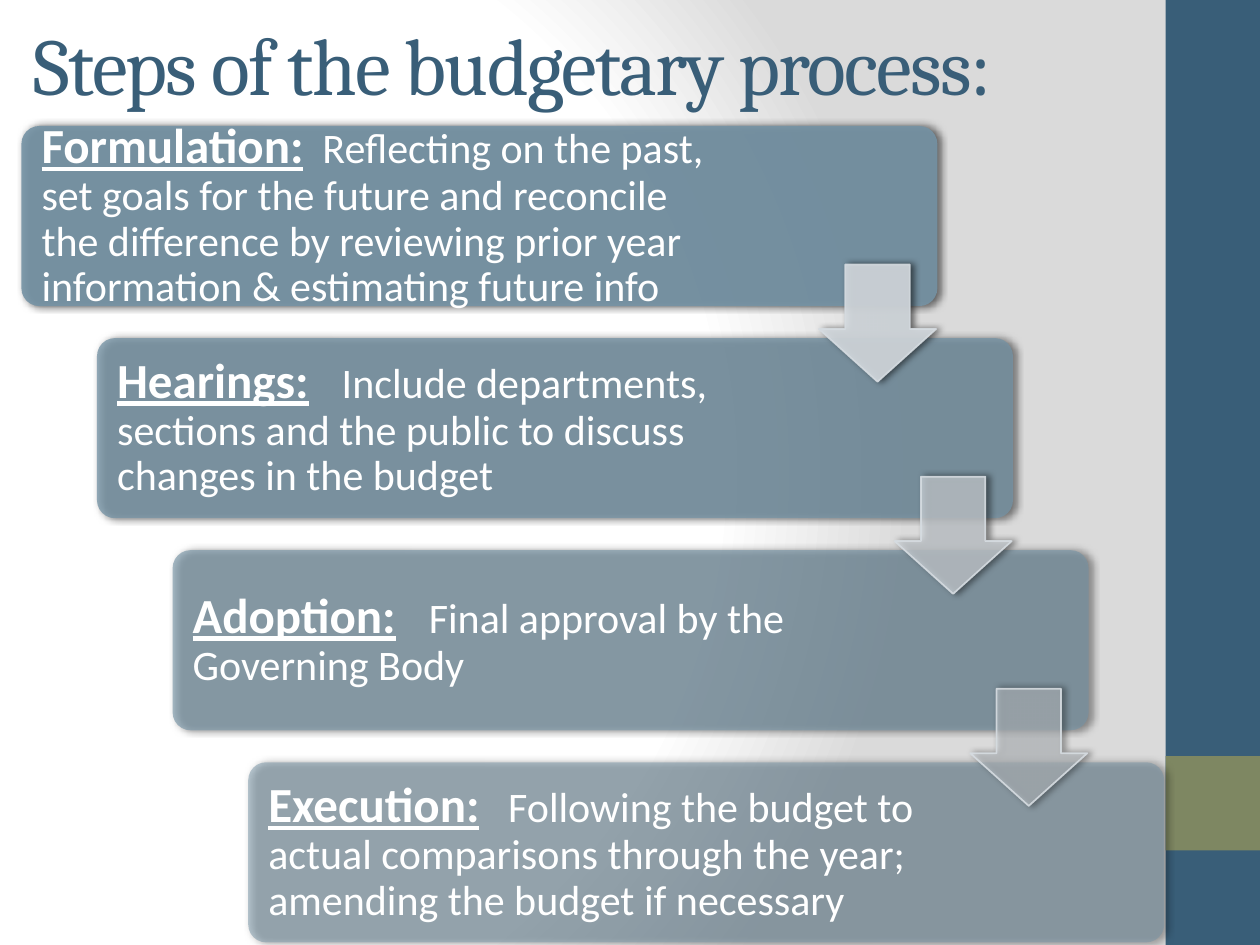
from lxml.etree import SubElement
from pptx import Presentation
from pptx.dml.color import RGBColor
from pptx.enum.shapes import MSO_SHAPE
from pptx.enum.text import MSO_ANCHOR
from pptx.oxml import parse_xml
from pptx.oxml.ns import nsdecls, qn
from pptx.util import Inches, Pt

TITLE = "Steps of the budgetary process:"
STEPS = [
    ("Formulation:", 5.4, "Reflecting on the past, set goals for the future and reconcile "
     "the difference by reviewing prior year information & estimating future info", 90),
    ("Hearings:", 13.5, "Include departments, sections and the public to discuss "
     "changes in the budget", 77),
    ("Adoption:", 13.5, "Final approval by the Governing Body", 63),
    ("Execution:", 10.9, "Following the budget to actual comparisons through the year; "
     "amending the budget if necessary", 50),
]
ARROW_ALPHAS = [90, 70, 50]
NAVY, OLIVE, STEEL, PALE, WHITE = "395E78", "7E8762", "7593A5", "D6DCE1", "FFFFFF"

LEFT, TOP = 0.17, 1
DX, DY = 0.6, (6.05 - 1) / 3
BOX_W, BOX_H = 7.27, 1.43
ARROW_DX, ARROW_DY, ARROW_SIZE = 6.33, 1.1, 0.93


def rgb(color):
    return RGBColor.from_string(color)


def set_alpha(fill, percent):
    clr = fill._xPr.find(qn("a:solidFill"))[0]
    SubElement(clr, qn("a:alpha")).set("val", str(percent * 1000))


def add_shape(s, kind, x, y, w, h, color, alpha=100):
    sp = s.shapes.add_shape(kind, Inches(x), Inches(y), Inches(w), Inches(h))
    sp.shadow.inherit = False
    sp.fill.solid()
    sp.fill.fore_color.rgb = rgb(color)
    if alpha < 100:
        set_alpha(sp.fill, alpha)
    sp.line.fill.background()
    return sp


def add_shadow(sp):
    effects = sp._element.spPr.find(qn("a:effectLst"))
    effects.append(parse_xml(
        f'<a:outerShdw {nsdecls("a")} blurRad="{Pt(4)}" dist="{Pt(2)}" dir="0" '
        'rotWithShape="0"><a:srgbClr val="000000"><a:alpha val="60000"/>'
        '</a:srgbClr></a:outerShdw>'))


def add_text(s, x, y, w, h, inset=None):
    tf = s.shapes.add_textbox(Inches(x), Inches(y), Inches(w), Inches(h)).text_frame
    tf.word_wrap = True
    tf.vertical_anchor = MSO_ANCHOR.MIDDLE
    if inset is not None:
        tf.margin_left = tf.margin_right = Inches(inset)
        tf.margin_top = tf.margin_bottom = Inches(inset)
    return tf.paragraphs[0]


def add_run(p, text, size, font, color, heading=False, spacing=0):
    r = p.add_run()
    r.text = text
    r.font.size = Pt(size)
    r.font.name = font
    r.font.color.rgb = rgb(color)
    r.font.bold = r.font.underline = heading
    if spacing:
        r.font._element.set("spc", str(round(spacing * 100)))


def set_background(s):
    fill = s.background.fill
    fill.solid()
    bg = fill._xPr
    stops = "".join(f'<a:gs pos="{pos}000"><a:srgbClr val="{color}"/></a:gs>'
                    for pos, color in [(0, WHITE), (75, WHITE), (100, "DADADA")])
    bg.replace(bg.find(qn("a:solidFill")), parse_xml(
        f'<a:gradFill {nsdecls("a")} rotWithShape="1"><a:gsLst>{stops}</a:gsLst>'
        '<a:path path="circle"><a:fillToRect l="20000" t="50000" r="100000" b="50000"/>'
        '</a:path></a:gradFill>'))


def main():
    prs = Presentation()
    prs.slide_width, prs.slide_height = Inches(10), Inches(7.5)
    s = prs.slides.add_slide(prs.slide_layouts[6])
    set_background(s)
    add_shape(s, MSO_SHAPE.RECTANGLE, 9.25, 0, 0.75, 7.5, NAVY)
    add_shape(s, MSO_SHAPE.RECTANGLE, 9.25, 6, 0.75, 0.75, OLIVE)

    for i, (heading, gap, text, alpha) in enumerate(STEPS):
        x, y = LEFT + i * DX, TOP + i * DY
        sp = add_shape(s, MSO_SHAPE.ROUNDED_RECTANGLE, x, y, BOX_W, BOX_H, STEEL, alpha)
        sp.adjustments[0] = 0.1
        add_shadow(sp)
        p = add_text(s, x + 0.04, y + 0.04, 5.64, 1.35, 0.12)
        p.line_spacing = 0.9
        add_run(p, heading, 28, "Calibri", WHITE, heading=True)
        add_run(p, " ", 24, "Calibri", WHITE, spacing=gap)
        add_run(p, text, 24, "Calibri", WHITE)

    for i, alpha in enumerate(ARROW_ALPHAS):
        sp = add_shape(s, MSO_SHAPE.DOWN_ARROW, LEFT + ARROW_DX + i * DX,
                       TOP + ARROW_DY + i * DY, ARROW_SIZE, ARROW_SIZE, PALE, alpha)
        sp.adjustments[0], sp.adjustments[1] = 0.55, 0.45
        sp.line.color.rgb = rgb(PALE)
        sp.line.width = Pt(1)
        set_alpha(sp.line.fill, 90)
        add_shadow(sp)

    p = add_text(s, LEFT, 0, 8.67, 1)
    add_run(p, TITLE, 46, "Cambria", NAVY, spacing=-1)
    prs.save("out.pptx")


if __name__ == "__main__":
    main()
